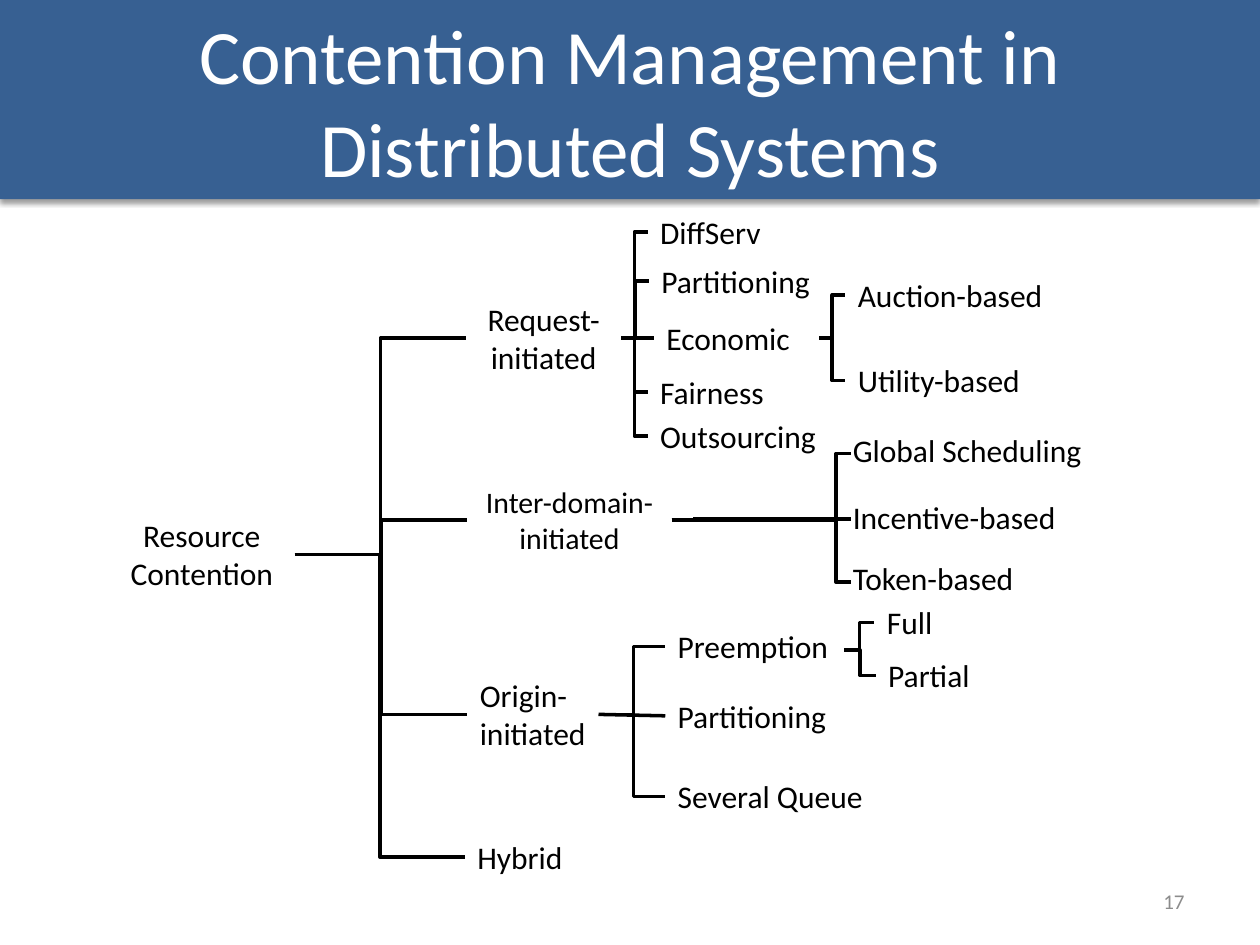
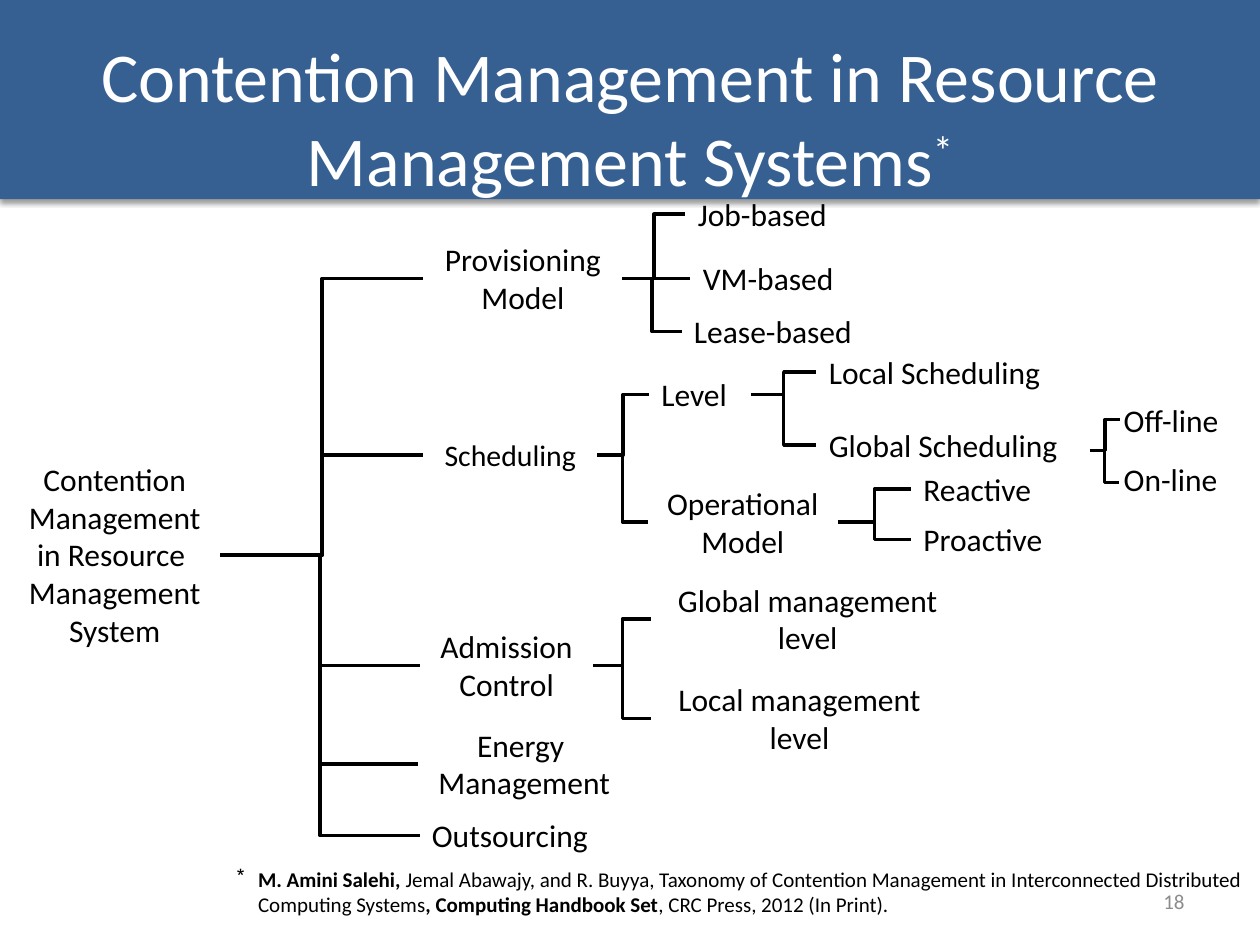
from lxml import etree
from pptx import Presentation
from pptx.dml.color import RGBColor
from pptx.enum.shapes import MSO_CONNECTOR, MSO_SHAPE
from pptx.enum.text import MSO_ANCHOR, MSO_AUTO_SIZE, PP_ALIGN
from pptx.oxml.ns import qn
from pptx.util import Inches, Pt

ELBOW, STRAIGHT = MSO_CONNECTOR.ELBOW, MSO_CONNECTOR.STRAIGHT
LEFT, CENTER, RIGHT = PP_ALIGN.LEFT, PP_ALIGN.CENTER, PP_ALIGN.RIGHT
MIDDLE = MSO_ANCHOR.MIDDLE
GROW, FIXED = MSO_AUTO_SIZE.SHAPE_TO_FIT_TEXT, MSO_AUTO_SIZE.NONE
LEFT_SIDE, RIGHT_SIDE = 1, 3
COLUMNS, ROWS = 100, 75


def rgb(value):
    return RGBColor.from_string(value)


def sub(parent, tag, **attrs):
    return etree.SubElement(parent, qn(tag), attrs)


class Deck:
    font = "Calibri"
    band_color, title_color = "376092", "FFFFFF"
    ink, number_color = "000000", "8C8C8C"

    def __init__(self):
        self.prs = Presentation()
        self.prs.slide_width, self.prs.slide_height = Inches(10), Inches(7.5)
        self.column = self.prs.slide_width / COLUMNS
        self.row = self.prs.slide_height / ROWS

    def grid(self, x, y, *size):
        units = (self.column, self.row) * 2
        return [round(v * unit) for v, unit in zip((x, y) + size, units)]

    def run(self, p, text, size, color=None, bold=None):
        r = p.add_run()
        r.text = text
        r.font.name, r.font.size, r.font.bold = self.font, Pt(size), bold
        r.font.color.rgb = rgb(color or self.ink)
        return r

    def slide(self, number, title, size, top):
        self.s = self.prs.slides.add_slide(self.prs.slide_layouts[5])
        self.band()
        sp = self.s.shapes.title
        sp.left, sp.top, sp.width, sp.height = self.grid(5, top, 90, 12.5)
        tf = sp.text_frame
        tf.word_wrap, tf.auto_size, tf.vertical_anchor = True, FIXED, MIDDLE
        p = tf.paragraphs[0]
        p.alignment = CENTER
        self.run(p, title, size, self.title_color)
        self.page_number(number)
        return p

    def band(self):
        sp = self.s.shapes.add_shape(MSO_SHAPE.RECTANGLE, *self.grid(0, 0, COLUMNS, 15.8))
        sp.fill.solid()
        sp.fill.fore_color.rgb = rgb(self.band_color)
        sp.line.fill.background()
        sp.shadow.inherit = False
        effects = sp._element.spPr.find(qn("a:effectLst"))
        shadow = sub(effects, "a:outerShdw", blurRad="40000", dist="20000",
                     dir="5400000", rotWithShape="0")
        color = sub(shadow, "a:srgbClr", val=self.ink)
        sub(color, "a:alpha", val="38000")
        self.s.shapes._spTree.insert(2, sp._element)

    def page_number(self, number):
        tf = self.s.shapes.add_textbox(*self.grid(71.7, 69.5, 23.3, 4)).text_frame
        tf.word_wrap, tf.vertical_anchor = True, MIDDLE
        p = tf.paragraphs[0]
        p.alignment = RIGHT
        self.run(p, str(number), 12, self.number_color)

    def label(self, x, y, w, text, align=LEFT, size=18):
        lines = text.split("\n")
        h = 1 + 0.168 * size * len(lines)
        sp = self.s.shapes.add_textbox(*self.grid(x, y, w, h))
        tf = sp.text_frame
        tf.word_wrap, tf.auto_size = False, GROW
        for i, line in enumerate(lines):
            p = tf.add_paragraph() if i else tf.paragraphs[0]
            p.alignment = align
            self.run(p, line, size)
        return sp

    def connect(self, start, end, kind=ELBOW, bend=None):
        ends = [self.grid(*e) if isinstance(e, tuple) else (0, 0) for e in (start, end)]
        c = self.s.shapes.add_connector(kind, *ends[0], *ends[1])
        if not isinstance(start, tuple):
            c.begin_connect(start, RIGHT_SIDE)
        if not isinstance(end, tuple):
            c.end_connect(end, LEFT_SIDE)
        c.line.color.rgb, c.line.width = rgb(self.ink), Pt(2)
        spPr = c._element.spPr
        sub(spPr, "a:effectLst")
        if bend is not None:
            guides = spPr.find(qn("a:prstGeom")).find(qn("a:avLst"))
            sub(guides, "a:gd", name="adj1", fmla=f"val {round(bend * 100000)}")

    def branch(self, parent, *children, bend=None):
        for child in children:
            self.connect(parent, child, bend=bend)

    def footnote(self, x, y, w, h, mark, parts):
        tf = self.s.shapes.add_textbox(*self.grid(x, y, w, h)).text_frame
        tf.word_wrap, tf.auto_size = True, GROW
        p = tf.paragraphs[0]
        pPr = p._p.get_or_add_pPr()
        pPr.set("marL", str(Inches(0.37)))
        pPr.set("indent", str(Inches(-0.17)))
        sub(pPr, "a:buChar", char=mark)
        for text, bold in parts:
            self.run(p, text, 12, bold=bold)


def distributed_systems(d):
    d.slide(17, "Contention Management in Distributed Systems", 44, 1.7)
    root = d.label(9.2, 40.5, 14.2, "Resource \nContention ", CENTER)
    request = d.label(37, 23.3, 12.3, "Request-\ninitiated", CENTER)
    inter_domain = d.label(37.1, 37.9, 16.2, "Inter-domain-\ninitiated", CENTER, 17)
    origin = d.label(37.1, 53.2, 10.7, "Origin-\ninitiated")
    hybrid = d.label(36.9, 66, 9.3, "Hybrid")
    d.branch(root, request, inter_domain, origin, hybrid)

    economic = d.label(51.9, 24.8, 13.1, "Economic")
    d.branch(request,
             d.label(51.4, 16.4, 11.1, "DiffServ"),
             d.label(51.5, 20.3, 14.6, "Partitioning"),
             economic,
             d.label(51.4, 29.1, 11.7, "Fairness"),
             d.label(51.4, 32.6, 15.6, "Outsourcing"))
    d.branch(economic,
             d.label(67.1, 21.4, 18.3, "Auction-based"),
             d.label(67.1, 28.2, 15.9, "Utility-based"))

    d.label(66.7, 33.7, 22.5, "Global Scheduling")
    d.label(66.7, 39, 19.7, "Incentive-based")
    d.label(66.7, 43.9, 16.5, "Token-based")
    d.branch((53.3, 41.25), (67.5, 36), (67.5, 46.2), bend=0.92)
    d.connect((55, 41.2), (67.5, 41.2), STRAIGHT)

    preemption = d.label(52.8, 49.3, 14.9, "Preemption")
    partitioning = d.label(52.8, 54.8, 14.6, "Partitioning")
    d.branch(origin, preemption, d.label(52.8, 61.2, 18.9, "Several Queue"))
    d.connect((47.5, 56.7), partitioning, STRAIGHT)
    d.branch((67, 51.6),
             d.label(69.4, 47.4, 6.1, "Full"),
             d.label(69.5, 51.6, 9.2, "Partial"))


def resource_management(d):
    title = d.slide(18, "Contention Management in Resource Management Systems", 40, 3)
    star = d.run(title, "*", 40, d.title_color)
    star._r.get_or_add_rPr().set("baseline", "30000")

    root = d.label(0.7, 36, 16.8, "Contention\nManagement\nin Resource \nManagement\nSystem", CENTER)
    provisioning = d.label(33.6, 18.6, 15.8, "Provisioning\nModel", CENTER)
    scheduling = d.label(33.6, 34.2, 13.8, "Scheduling", CENTER, 17)
    admission = d.label(33.3, 49.3, 13.8, "Admission\nControl", CENTER)
    energy = d.label(33.2, 57.1, 16.8, "Energy \nManagement", CENTER)
    outsourcing = d.label(33.3, 64.3, 15.6, "Outsourcing")
    d.branch(root, provisioning, scheduling, admission, energy, outsourcing)

    d.branch(provisioning,
             d.label(54.4, 15, 13.8, "Job-based"),
             d.label(54.8, 20.1, 13.7, "VM-based"),
             d.label(54.1, 24.3, 16.6, "Lease-based"))

    level = d.label(51.5, 29.3, 8.1, "Level")
    operational = d.label(51.4, 37.9, 15.1, "Operational\nModel", CENTER)
    d.branch(scheduling, level, operational)
    d.branch(level,
             d.label(64.8, 27.5, 21.2, "Local Scheduling"),
             d.label(64.8, 33.3, 22.5, "Global Scheduling"))
    d.branch(operational,
             d.label(72.3, 36.8, 11.8, "Reactive"),
             d.label(72.3, 40.8, 12.5, "Proactive"))
    d.label(88.2, 31.3, 10.1, "Off-line")
    d.label(88.2, 36, 10.2, "On-line")
    d.branch((86.5, 35.75), (88.9, 33.3), (88.8, 38.3))

    d.branch(admission,
             d.label(51.7, 45.6, 24.8, "Global management\nlevel", CENTER),
             d.label(51.7, 53.5, 23.5, "Local management\nlevel", CENTER))

    d.footnote(15.8, 68.3, 86.7, 5, "*", [
        ("M. Amini Salehi, ", True),
        ("Jemal Abawajy, and R. Buyya, Taxonomy of Contention Management in "
         "Interconnected Distributed Computing Systems", False),
        (", Computing Handbook Set", True),
        (", CRC Press, 2012 (In Print).", False)])


def main():
    d = Deck()
    distributed_systems(d)
    resource_management(d)
    d.prs.save("out.pptx")


if __name__ == "__main__":
    main()
